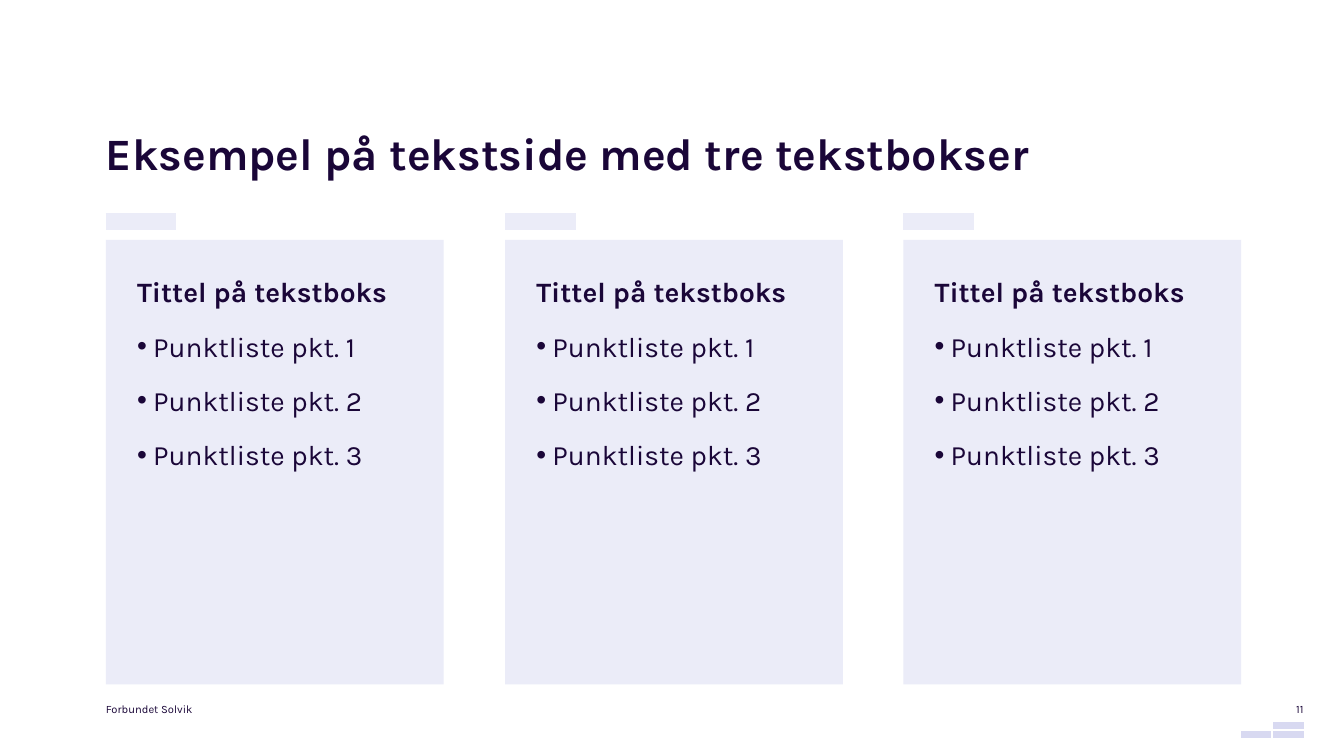
from lxml import etree
from pptx import Presentation
from pptx.dml.color import RGBColor
from pptx.enum.shapes import MSO_CONNECTOR, MSO_SHAPE
from pptx.enum.text import MSO_ANCHOR, MSO_AUTO_SIZE, PP_ALIGN
from pptx.oxml.ns import qn
from pptx.util import Pt

LEFT, RIGHT = PP_ALIGN.LEFT, PP_ALIGN.RIGHT
TOP, BOTTOM = MSO_ANCHOR.TOP, MSO_ANCHOR.BOTTOM
PX = 9144  # 100 px to the inch
INK, PANEL, ACCENT = "1A0638", "EBECF8", "D8D9F1"


def set_text(sp, lines, size, bold=False, align=LEFT, anchor=TOP, insets=(0, 0, 0, 0)):
    """Fill a shape with paragraphs and return them; insets are left, top, right, bottom."""
    tf = sp.text_frame
    tf.word_wrap = True
    tf.auto_size = MSO_AUTO_SIZE.NONE
    tf.vertical_anchor = anchor
    tf.margin_left, tf.margin_top, tf.margin_right, tf.margin_bottom = [v * PX for v in insets]
    tf.text = "\n".join(lines)
    for p in tf.paragraphs:
        p.alignment = align
        p.font.name = "Karla"
        p.font.size = Pt(size)
        p.font.bold = bold
        p.font.color.rgb = RGBColor.from_string(INK)
    return tf.paragraphs


def add_bar(x, y, width, color, weight):
    line = slide.shapes.add_connector(
        MSO_CONNECTOR.STRAIGHT, x * PX, y * PX, (x + width) * PX, y * PX)
    line.line.color.rgb = RGBColor.from_string(color)
    line.line.width = Pt(weight)
    etree.SubElement(line._element.spPr, qn("a:effectLst"))


prs = Presentation()
prs.slide_width, prs.slide_height = 1333 * PX, 750 * PX
slide = prs.slides.add_slide(prs.slide_layouts[5])

# Title
title = slide.shapes.title
title.left, title.top, title.width, title.height = 105 * PX, 55 * PX, 1127 * PX, 123 * PX
heading = set_text(title, ["Eksempel på tekstside med tre tekstbokser"], 32,
                   bold=True, anchor=BOTTOM)[0]
heading.line_spacing = 1.1

# Three text boxes, each with a tab above
bullets = [f"Punktliste pkt. {n}" for n in (1, 2, 3)]
for x in (105, 501, 896):
    add_bar(x, 220, 70, PANEL, 12.25)
    panel = slide.shapes.add_shape(MSO_SHAPE.RECTANGLE, x * PX, 238 * PX, 335 * PX, 441 * PX)
    panel.shadow.inherit = False
    panel.fill.solid()
    panel.fill.fore_color.rgb = RGBColor.from_string(PANEL)
    panel.line.fill.background()
    paragraphs = set_text(panel, ["Tittel på tekstboks", *bullets], 20,
                          insets=(31, 28, 28, 31))
    paragraphs[0].font.bold = True
    for p in paragraphs:
        p.line_spacing = 1.2
        p.space_before = Pt(10)
    for p in paragraphs[1:]:
        pPr = p._p.get_or_add_pPr()
        pPr.set("marL", str(16 * PX))
        pPr.set("indent", str(-20 * PX))
        bullet = etree.Element(qn("a:buChar"), char="•")
        pPr.find(qn("a:defRPr")).addprevious(bullet)
        bullet.addprevious(etree.Element(qn("a:buFont"), typeface="Arial"))

# Footer, page number and corner bricks
footer = slide.shapes.add_textbox(105 * PX, 697 * PX, 108 * PX, 13 * PX)
set_text(footer, ["Forbundet Solvik"], 8)
number = slide.shapes.add_textbox(1255 * PX, 697 * PX, 38 * PX, 19 * PX)
set_text(number, ["11"], 8, align=RIGHT)
for x, y in ((1263, 729), (1263, 720), (1231, 729)):
    add_bar(x, y, 30, ACCENT, 4.75)

prs.save("out.pptx")
